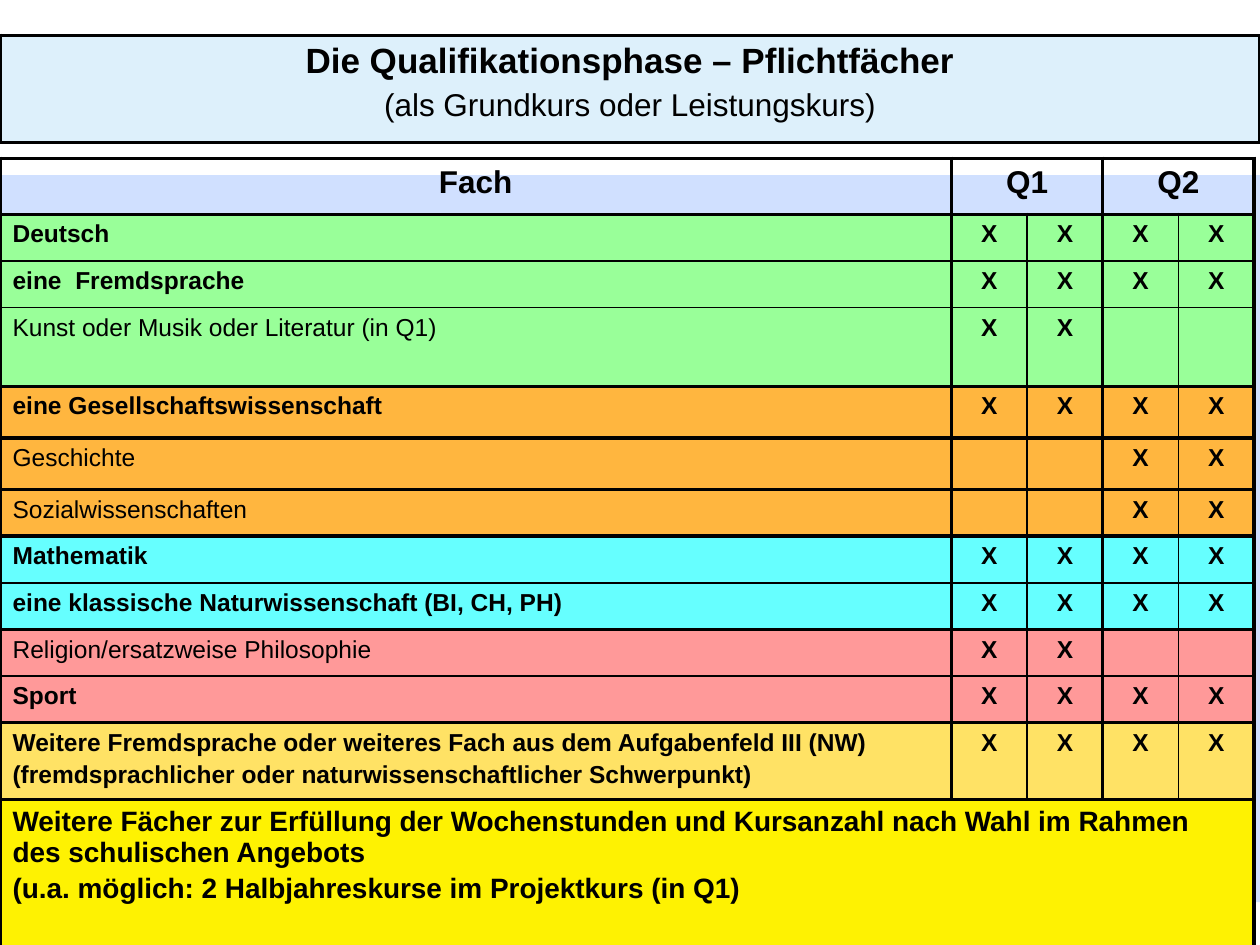
from dataclasses import dataclass
from lxml.etree import SubElement
from pptx import Presentation
from pptx.dml.color import RGBColor
from pptx.enum.shapes import MSO_SHAPE
from pptx.enum.text import PP_ALIGN
from pptx.oxml.ns import qn
from pptx.util import Cm, Pt


@dataclass(frozen=True)
class Theme:
    font: str = "Arial"
    ink: str = "000000"
    band: str = "6699FF"
    pale: str = "DDF0FB"
    green: str = "99FF99"
    amber: str = "FFB63F"
    aqua: str = "66FFFF"
    rose: str = "FF9999"
    sand: str = "FFE265"
    lemon: str = "FEF202"
    title: int = 20
    head: int = 18
    note: int = 16
    body: int = 14
    thick: float = 2.25
    thin: float = 1


look = Theme()


def paint(cell, fill, thin=""):
    """Draw the four borders, thin on the named sides, then the fill."""
    props = cell._tc.get_or_add_tcPr()
    for side in "LRTB":
        width = look.thin if side in thin else look.thick
        line = SubElement(props, qn("a:ln" + side), w=str(Pt(width)))
        tint = SubElement(line, qn("a:solidFill"))
        SubElement(tint, qn("a:srgbClr"), val=look.ink)
    if fill:
        cell.fill.solid()
        cell.fill.fore_color.rgb = RGBColor.from_string(fill)
    else:
        cell.fill.background()


def write(cell, text, size, bold=True, align=PP_ALIGN.LEFT):
    """Fill a cell with text, one paragraph a line."""
    cell.text_frame.text = text
    for index, para in enumerate(cell.text_frame.paragraphs):
        para.alignment = align
        if index:
            para.space_before = Pt(size * 0.2)
        for run in para.runs:
            run.font.name = look.font
            run.font.size = Pt(size)
            run.font.bold = bold
            run.font.color.rgb = RGBColor.from_string(look.ink)
        if not para.runs:
            SubElement(para._p, qn("a:endParaRPr"), sz=str(size * 100))


deck = Presentation()
deck.slide_width, deck.slide_height = Cm(25.4), Cm(19.05)
slide = deck.slides.add_slide(deck.slide_layouts[6])
shapes = slide.shapes

# Tinted band behind the tables
band = shapes.add_shape(MSO_SHAPE.RECTANGLE, 0, Cm(3.53), Cm(25.4), Cm(14.66))
band.shadow.inherit = False
band.line.fill.background()
band.fill.solid()
band.fill.fore_color.rgb = RGBColor.from_string(look.band)
tone = band.fill._xPr.find(qn("a:solidFill"))[0]
SubElement(tone, qn("a:alpha"), val="30000")

# Title box
title = shapes.add_table(1, 1, 0, Cm(0.71), Cm(25.4), Cm(2.16)).table
title.first_row = title.horz_banding = False
cell = title.cell(0, 0)
paint(cell, look.pale)
write(cell, "Die Qualifikationsphase – Pflichtfächer\n(als Grundkurs oder Leistungskurs)",
      look.title, align=PP_ALIGN.CENTER)
sub = cell.text_frame.paragraphs[1].runs[0].font
sub.size, sub.bold = Pt(look.head), False

# Subjects: name, marks per half-year, fill, bold, row height, thin line below
rows = [
    ("Deutsch", "XXXX", look.green, True, 0.94, True),
    ("eine  Fremdsprache", "XXXX", look.green, True, 0.94, True),
    ("Kunst oder Musik oder Literatur (in Q1)", "XX  ", look.green, False, 1.59, False),
    ("eine Gesellschaftswissenschaft", "XXXX", look.amber, True, 1.04, False),
    ("Geschichte", "  XX", look.amber, False, 1.04, False),
    ("Sozialwissenschaften", "  XX", look.amber, False, 0.94, False),
    ("Mathematik", "XXXX", look.aqua, True, 0.94, True),
    ("eine klassische Naturwissenschaft (BI, CH, PH)", "XXXX", look.aqua, True, 0.94, False),
    ("Religion/ersatzweise Philosophie", "XX  ", look.rose, False, 0.94, True),
    ("Sport", "XXXX", look.rose, True, 0.94, False),
    ("Weitere Fremdsprache oder weiteres Fach aus dem Aufgabenfeld III (NW)\n"
     "(fremdsprachlicher oder naturwissenschaftlicher Schwerpunkt)",
     "XXXX", look.sand, True, 1.55, False),
]
last = len(rows) + 1
grid = shapes.add_table(last + 1, 5, 0, Cm(3.19), Cm(25.28), Cm(15.88)).table
grid.first_row = grid.horz_banding = False
for col, width in zip(grid.columns, [19.18] + [1.525] * 4):
    col.width = Cm(width)

# Header row
grid.rows[0].height = Cm(1.13)
for col in range(5):
    paint(grid.cell(0, col), None)
for col, text in ((0, "Fach"), (1, "Q1"), (3, "Q2")):
    if col:
        grid.cell(0, col).merge(grid.cell(0, col + 1))
    write(grid.cell(0, col), text, look.head, align=PP_ALIGN.CENTER)

# Subject rows
above = False
for row, (name, marks, fill, bold, height, below) in enumerate(rows, 1):
    grid.rows[row].height = Cm(height)
    edge = "T" * above + "B" * below
    paint(grid.cell(row, 0), fill, edge)
    write(grid.cell(row, 0), name, look.body, bold)
    for col, mark in enumerate(marks, 1):
        paint(grid.cell(row, col), fill, edge + ("R" if col % 2 else "L"))
        write(grid.cell(row, col), mark.strip(), look.body, align=PP_ALIGN.CENTER)
    above = below

# Closing row
grid.rows[last].height = Cm(2.96)
for col in range(5):
    paint(grid.cell(last, col), look.lemon)
grid.cell(last, 0).merge(grid.cell(last, 4))
write(grid.cell(last, 0),
      "Weitere Fächer zur Erfüllung der Wochenstunden und Kursanzahl nach Wahl "
      "im Rahmen des schulischen Angebots\n"
      "(u.a. möglich: 2 Halbjahreskurse im Projektkurs (in Q1)", look.note)

deck.save("out.pptx")
